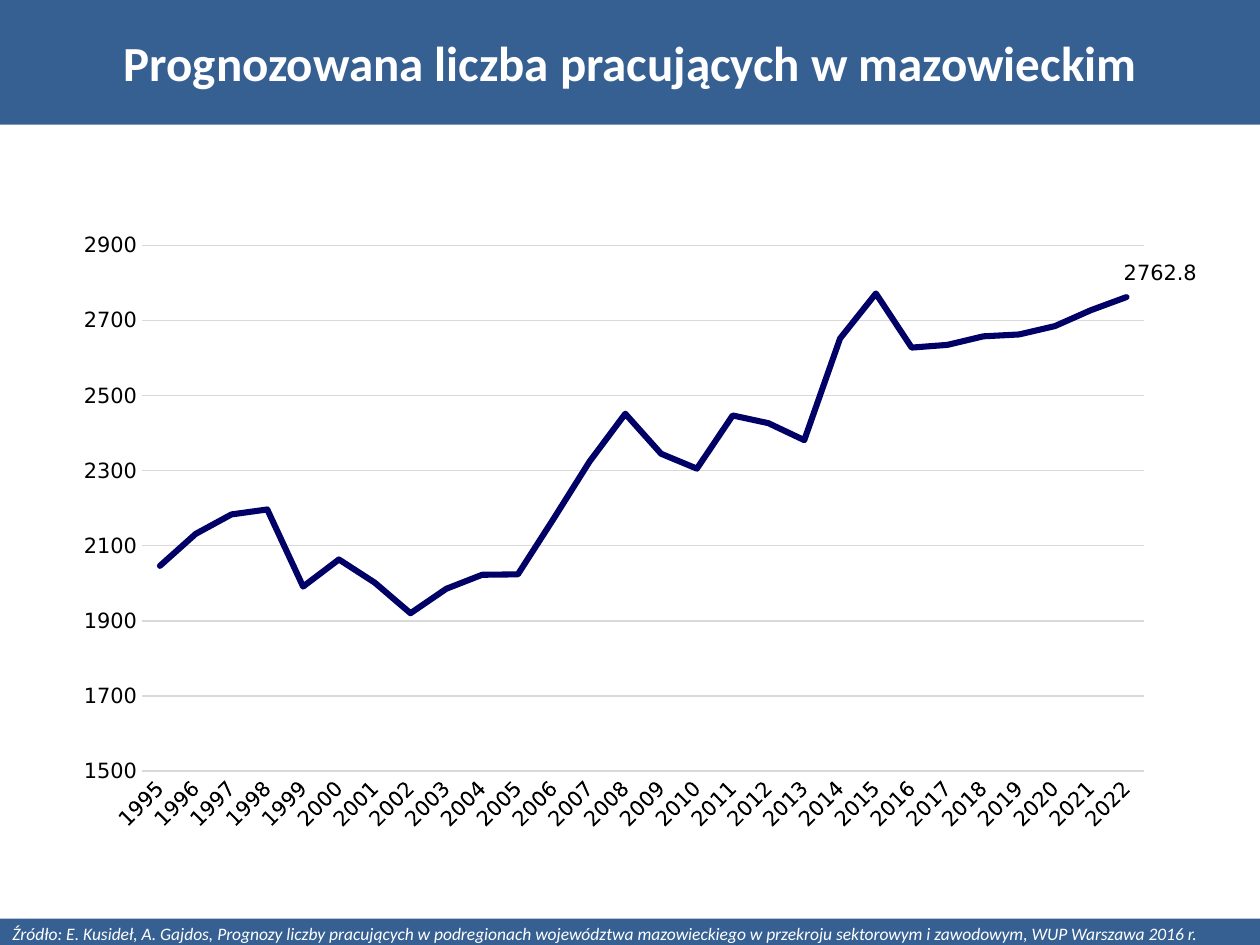
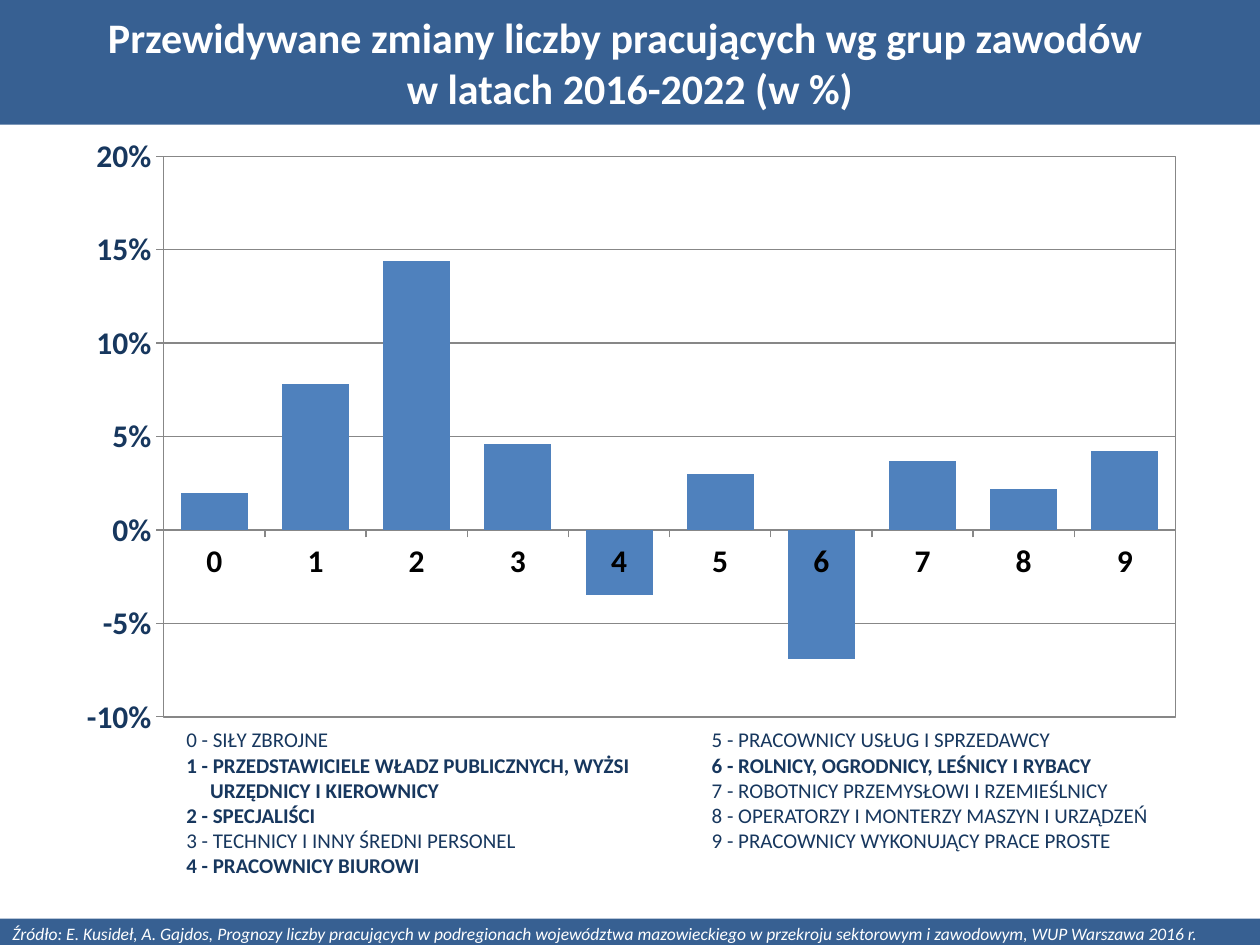
from pptx import Presentation
from pptx import util as u
from pptx.chart import data as chart_data
from pptx.dml.color import RGBColor
from pptx.enum import chart as kinds, shapes, text
from pptx.oxml import parse_xml
from pptx.oxml.ns import nsdecls, qn

SCALE = u.Inches(1) // 100
PAGE_WIDTH, PAGE_HEIGHT = 1000, 750
BAND = RGBColor(0x37, 0x60, 0x92)
WHITE = RGBColor(0xFF, 0xFF, 0xFF)
BLACK = RGBColor(0, 0, 0)
NAVY = RGBColor(0x17, 0x37, 0x5E)
DARK_BLUE = RGBColor(0, 0, 0x66)
BAR_BLUE = RGBColor(0x4F, 0x81, 0xBD)
LIGHT_GREY = RGBColor(0xD9, 0xD9, 0xD9)
GREY = RGBColor(0x87, 0x87, 0x87)

SOURCE = (
    "Źródło: E. Kusideł, A. Gajdos, Prognozy liczby pracujących w podregionach "
    "województwa mazowieckiego w przekroju sektorowym i zawodowym, WUP Warszawa 2016 r."
)
EMPLOYED = [
    2046.5, 2131.8, 2183.7, 2197, 1991.3, 2063.6, 2001.9, 1920.3, 1985.5, 2022.8,
    2023.9, 2172.6, 2324.3, 2452.1, 2345.4, 2305.7, 2447.4, 2426.9, 2381.6, 2652.6,
    2772.5, 2628.3, 2635.5, 2658.3, 2663.3, 2685.5, 2727.7, 2762.8,
]
CHANGES = [0.02, 0.078, 0.144, 0.046, -0.035, 0.03, -0.069, 0.037, 0.022, 0.042]
GROUPS_LEFT = [
    ("0 - SIŁY ZBROJNE", False, 0),
    ("1 - PRZEDSTAWICIELE WŁADZ PUBLICZNYCH, WYŻSI", True, 0),
    ("URZĘDNICY I KIEROWNICY", True, 19),
    ("2 - SPECJALIŚCI", True, 0),
    ("3 - TECHNICY I INNY ŚREDNI PERSONEL", False, 0),
    ("4 - PRACOWNICY BIUROWI", True, 0),
]
GROUPS_RIGHT = [
    ("5 - PRACOWNICY USŁUG I SPRZEDAWCY", False, 0),
    ("6 - ROLNICY, OGRODNICY, LEŚNICY I RYBACY", True, 0),
    ("7 - ROBOTNICY PRZEMYSŁOWI I RZEMIEŚLNICY", False, 0),
    ("8 - OPERATORZY I MONTERZY MASZYN I URZĄDZEŃ", False, 0),
    ("9 - PRACOWNICY WYKONUJĄCY PRACE PROSTE", False, 0),
]


def px(*lengths):
    return [u.Emu(length * SCALE) for length in lengths]


def apply(target, **values):
    for name, value in values.items():
        setattr(target, name, value)


def style_font(font, size, color, **values):
    apply(font, size=u.Pt(size), name="Calibri")
    apply(font, **values)
    font.color.rgb = color


def style_line(line, color, width=0.75):
    line.color.rgb = color
    line.width = u.Pt(width)


def layout_xml(**values):
    items = "".join(f'<c:{name} val="{value}"/>' for name, value in values.items())
    return parse_xml(
        f'<c:layout {nsdecls("c")}><c:manualLayout>{items}</c:manualLayout></c:layout>'
    )


class Deck:
    def __init__(self):
        self.deck = Presentation()
        self.deck.slide_width, self.deck.slide_height = px(PAGE_WIDTH, PAGE_HEIGHT)
        self.page = None

    def add_page(self, title, size):
        self.page = self.deck.slides.add_slide(self.deck.slide_layouts[5])
        box = self.page.shapes.title
        self.place(box, 0, 0, PAGE_WIDTH, 99)
        self.fill_band(box, title, text.PP_ALIGN.CENTER, size=size, bold=True)
        footer = self.page.shapes.add_shape(
            shapes.MSO_SHAPE.RECTANGLE, *px(0, 729, PAGE_WIDTH, 24)
        )
        footer.shadow.inherit = False
        self.fill_band(footer, SOURCE, text.PP_ALIGN.LEFT, size=10, italic=True)

    def place(self, box, *lengths):
        apply(box, **dict(zip(("left", "top", "width", "height"), px(*lengths))))

    def fill_band(self, box, words, align, **font):
        box.fill.solid()
        box.fill.fore_color.rgb = BAND
        box.line.fill.background()
        frame = box.text_frame
        apply(frame, text=words, word_wrap=True, auto_size=text.MSO_AUTO_SIZE.NONE,
              vertical_anchor=text.MSO_ANCHOR.MIDDLE)
        para = frame.paragraphs[0]
        para.alignment = align
        for span in para.runs:
            style_font(span.font, color=WHITE, **font)

    def add_list(self, lengths, rows):
        box = self.page.shapes.add_textbox(*px(*lengths))
        frame = box.text_frame
        apply(frame, word_wrap=True, auto_size=text.MSO_AUTO_SIZE.SHAPE_TO_FIT_TEXT)
        for index, (words, bold, indent) in enumerate(rows):
            para = frame.add_paragraph() if index else frame.paragraphs[0]
            span = para.add_run()
            span.text = words
            style_font(span.font, 12, NAVY, bold=bold)
            if indent:
                para._p.get_or_add_pPr().set("marL", str(indent * SCALE))

    def add_chart(self, kind, lengths, plot_lengths, cats, values, grid, axis, font):
        table = chart_data.CategoryChartData()
        table.categories = cats
        table.add_series("Series 1", values)
        chart = self.page.shapes.add_chart(kind, *px(*lengths), table).chart
        apply(chart, has_title=False, has_legend=False)
        style_font(chart.font, color=BLACK, **font)
        apply(chart.value_axis, has_major_gridlines=True, **axis)
        style_line(chart.value_axis.major_gridlines.format.line, grid)
        style_line(chart.category_axis.format.line, grid)
        left, top, width, height = lengths
        plot_left, plot_top, plot_width, plot_height = plot_lengths
        area = chart._chartSpace.chart.plotArea
        for old in area.findall(qn("c:layout")):
            area.remove(old)
        area.insert(0, layout_xml(
            layoutTarget="inner", xMode="edge", yMode="edge",
            x=(plot_left - left) / width, y=(plot_top - top) / height,
            w=plot_width / width, h=plot_height / height,
        ))
        return chart

    def frame_plot(self, chart, color):
        chart._chartSpace.chart.plotArea.append(parse_xml(
            f'<c:spPr {nsdecls("c", "a")}><a:noFill/><a:ln w="9525"><a:solidFill>'
            f'<a:srgbClr val="{color}"/></a:solidFill></a:ln></c:spPr>'
        ))

    def round_line(self, line):
        outline = line._get_or_add_ln()
        outline.set("cap", "rnd")
        outline.append(parse_xml(f'<a:round {nsdecls("a")}/>'))

    def label_last_point(self, series, x, y):
        series.data_labels.show_value = False
        label = series.points[len(series.values) - 1].data_label
        label.position = kinds.XL_LABEL_POSITION.ABOVE
        labels = series.data_labels._element
        labels.find(qn("c:dLbl")).insert(1, layout_xml(x=x, y=y))
        labels.append(parse_xml(
            f'<c:extLst {nsdecls("c")}>'
            '<c:ext uri="{CE6537A1-D6FC-4f65-9D91-7224C49458BB}" '
            'xmlns:c15="http://schemas.microsoft.com/office/drawing/2012/chart">'
            '<c15:showLeaderLines val="1"/></c:ext></c:extLst>'
        ))


def add_forecast(deck):
    deck.add_page("Prognozowana liczba pracujących w mazowieckim", 28)
    chart = deck.add_chart(
        kinds.XL_CHART_TYPE.LINE, (50, 175, 900, 495), (113, 195, 799, 417),
        [str(year) for year in range(1995, 2023)], EMPLOYED, LIGHT_GREY,
        dict(minimum_scale=1500, maximum_scale=2900, major_unit=200,
             major_tick_mark=kinds.XL_TICK_MARK.NONE),
        dict(size=12, name="DejaVu Sans", bold=False),
    )
    chart.value_axis.format.line.fill.background()
    years = chart.category_axis
    years.major_tick_mark = kinds.XL_TICK_MARK.NONE
    style_font(years.tick_labels.font, 12, BLACK, name="DejaVu Sans", bold=False)
    years._element.find(qn("c:txPr")).find(qn("a:bodyPr")).set("rot", "-2700000")
    series = chart.plots[0].series[0]
    series.smooth = False
    series.marker.style = kinds.XL_MARKER_STYLE.NONE
    style_line(series.format.line, DARK_BLUE, 3.5)
    deck.round_line(series.format.line)
    deck.label_last_point(series, 0.03, -0.01)


def add_changes(deck):
    deck.add_page(
        "Przewidywane zmiany liczby pracujących wg grup zawodów \v"
        "w latach 2016-2022 (w %)", 24,
    )
    chart = deck.add_chart(
        kinds.XL_CHART_TYPE.COLUMN_CLUSTERED, (51, 99, 900, 495), (130, 124, 803, 445),
        [str(group) for group in range(10)], CHANGES, GREY,
        dict(minimum_scale=-0.1, maximum_scale=0.2, major_unit=0.05,
             major_tick_mark=kinds.XL_TICK_MARK.OUTSIDE),
        dict(size=18, bold=True),
    )
    percents = chart.value_axis
    apply(percents.tick_labels, number_format="0%", number_format_is_linked=False)
    style_font(percents.tick_labels.font, 18, NAVY, bold=True)
    style_line(percents.format.line, GREY)
    chart.category_axis.major_tick_mark = kinds.XL_TICK_MARK.OUTSIDE
    plot = chart.plots[0]
    apply(plot, gap_width=51, vary_by_categories=False)
    series = plot.series[0]
    series.invert_if_negative = False
    series.format.fill.solid()
    series.format.fill.fore_color.rgb = BAR_BLUE
    deck.frame_plot(chart, GREY)
    deck.add_list((138, 572, 402, 131), GROUPS_LEFT)
    deck.add_list((555, 572, 378, 111), GROUPS_RIGHT)


def main():
    deck = Deck()
    add_forecast(deck)
    add_changes(deck)
    deck.deck.save("out.pptx")


if __name__ == "__main__":
    main()
